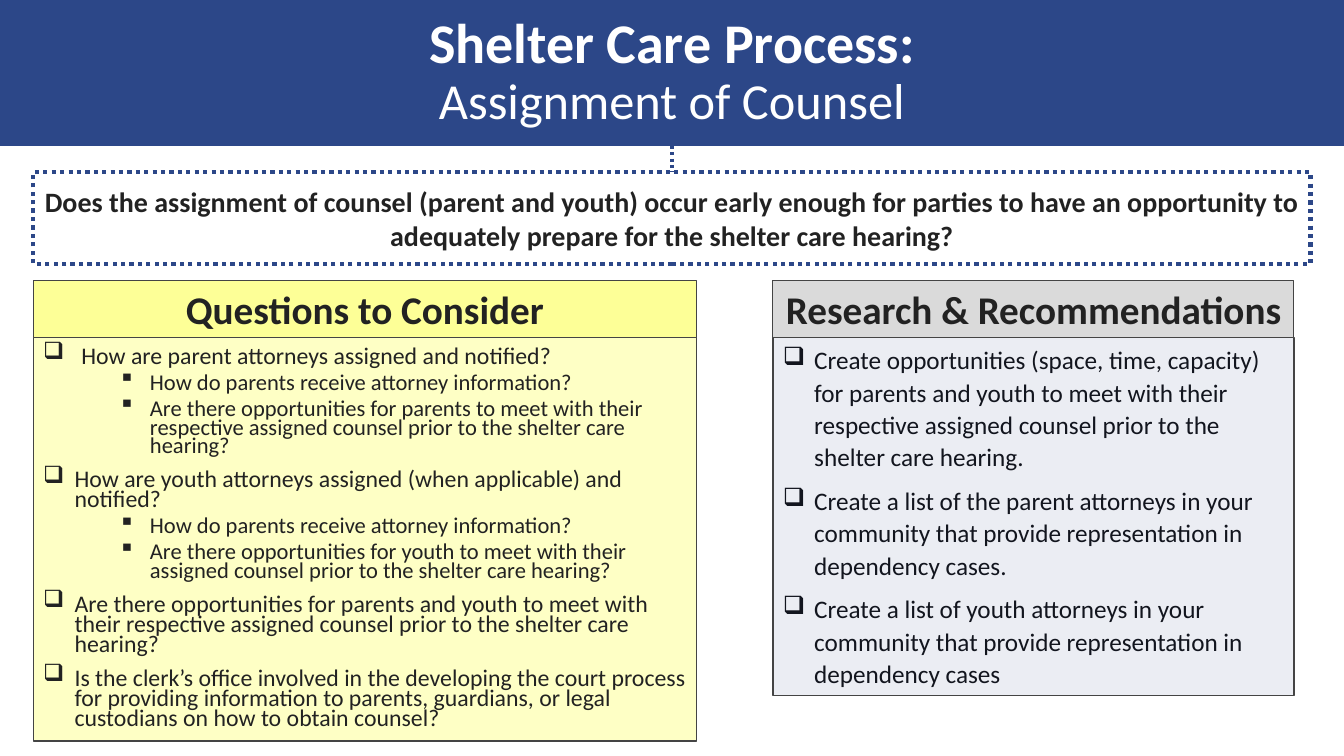
from lxml import etree
from pptx import Presentation
from pptx import util as u
from pptx.dml.color import RGBColor
from pptx.enum import dml, shapes, text
from pptx.oxml.ns import qn

Cm, Pt = u.Cm, u.Pt
COLORS = {
    "navy": "2C4788", "white": "FFFFFF", "ink": "222222", "dark": "12151E",
    "border": "444444", "yellow": "FDFF97", "cream": "FEFFC5",
    "gray": "DADADA", "mist": "EBEDF3",
}
WIDTH, HEIGHT = 33.87, 19.05
HEADING_HEIGHT = 1.45

# Each checklist entry is (level, text)
QUESTIONS = [
    (0, "How are parent attorneys assigned and notified?"),
    (1, "How do parents receive attorney information?"),
    (1, "Are there opportunities for parents to meet with their respective "
        "assigned counsel prior to the shelter care hearing?"),
    (0, "How are youth attorneys assigned (when applicable) and notified?"),
    (1, "How do parents receive attorney information?"),
    (1, "Are there opportunities for youth to meet with their assigned "
        "counsel prior to the shelter care hearing?"),
    (0, "Are there opportunities for parents and youth to meet with their "
        "respective assigned counsel prior to the shelter care hearing?"),
    (0, "Is the clerk’s office involved in the developing the court process "
        "for providing information to parents, guardians, or legal "
        "custodians on how to obtain counsel?"),
]
RECOMMENDATIONS = [
    (0, "Create opportunities (space, time, capacity) for parents and youth "
        "to meet with their respective assigned counsel prior to the shelter "
        "care hearing."),
    (0, "Create a list of the parent attorneys in your community that "
        "provide representation in dependency cases."),
    (0, "Create a list of youth attorneys in your community that provide "
        "representation in dependency cases"),
]


def rgb(name):
    return RGBColor.from_string(COLORS[name])


def style_line(line, color, width, dotted=False):
    line.color.rgb = rgb(color)
    line.width = Pt(width)
    if dotted:
        line.dash_style = dml.MSO_LINE.ROUND_DOT


def add_box(slide, box, fill=None, border=None, border_width=1, dotted=False,
            anchor=text.MSO_ANCHOR.MIDDLE):
    rect = slide.shapes.add_shape(shapes.MSO_SHAPE.RECTANGLE,
                                  *(Cm(length) for length in box))
    rect.shadow.inherit = False
    if fill:
        rect.fill.solid()
        rect.fill.fore_color.rgb = rgb(fill)
    else:
        rect.fill.background()
    if border:
        style_line(rect.line, border, border_width, dotted)
    else:
        rect.line.fill.background()
    rect.text_frame.word_wrap = True
    rect.text_frame.vertical_anchor = anchor
    return rect


def write(paragraph, words, size, color="ink", bold=False,
          align=text.PP_ALIGN.CENTER, spacing=1.0, before=0, after=0):
    paragraph.alignment = align
    paragraph.line_spacing = spacing
    paragraph.space_before, paragraph.space_after = Pt(before), Pt(after)
    run = paragraph.add_run()
    run.text = words
    run.font.name = "Calibri"
    run.font.size = Pt(size)
    run.font.bold = bold
    run.font.color.rgb = rgb(color)


def add_bullet(paragraph, mark, indent, hanging):
    properties = paragraph._p.get_or_add_pPr()
    properties.set("marL", str(Cm(indent)))
    properties.set("indent", str(-Cm(hanging)))
    etree.SubElement(properties, qn("a:buChar")).set("char", mark)


def add_banner(slide, box):
    banner = add_box(slide, box, fill="navy")
    title = banner.text_frame.paragraphs[0]
    write(title, "Shelter Care Process:", 40, "white", bold=True, spacing=0.9)
    title.add_line_break()
    write(title, "Assignment of Counsel", 36, "white", spacing=0.9)
    return banner


def add_key_question(slide, box, banner):
    question = add_box(slide, box, border="navy", border_width=3, dotted=True)
    write(question.text_frame.paragraphs[0],
          "Does the assignment of counsel (parent and youth) occur early "
          "enough for parties to have an opportunity to adequately prepare "
          "for the shelter care hearing?", 20, bold=True)

    # Dotted link from the banner
    link = slide.shapes.add_connector(shapes.MSO_CONNECTOR.STRAIGHT, 0, 0, 0, 0)
    link.begin_connect(banner, 2)
    link.end_connect(question, 0)
    style_line(link.line, "navy", 2.25, dotted=True)
    etree.SubElement(link._element.spPr, qn("a:effectLst"))


def add_panel(slide, box, heading, entries, heading_fill, body_fill, sizes,
              color="ink", spacing=1.0, before=(0, 0), after=0,
              first_indent=0.79, anchor=text.MSO_ANCHOR.TOP):
    left, top, width, height = box

    # Checklist
    body = add_box(slide, (left, top + HEADING_HEIGHT, width,
                           height - HEADING_HEIGHT),
                   fill=body_fill, border="border", anchor=anchor)
    frame = body.text_frame
    for number, (level, words) in enumerate(entries):
        entry = frame.add_paragraph() if number else frame.paragraphs[0]
        entry.level = level
        write(entry, words, sizes[level], color, align=text.PP_ALIGN.LEFT,
              spacing=spacing, before=before[level], after=after)
        if level:
            add_bullet(entry, "▪", 2.69, 0.79)
        else:
            indent = 0.79 if number else first_indent
            add_bullet(entry, "❑", indent, indent)

    # Heading
    header = add_box(slide, (left, top, width, HEADING_HEIGHT),
                     fill=heading_fill, border="border", border_width=0.75)
    header.text_frame.word_wrap = False
    write(header.text_frame.paragraphs[0], heading, 28, bold=True)


def main():
    deck = Presentation()
    deck.slide_width, deck.slide_height = Cm(WIDTH), Cm(HEIGHT)
    slide = deck.slides.add_slide(deck.slide_layouts[6])

    banner = add_banner(slide, (0, 0, WIDTH, 3.68))
    add_key_question(slide, (0.84, 4.34, 32.19, 2.31), banner)
    add_panel(slide, (0.84, 7.06, 16.71, 11.61), "Questions to Consider",
              QUESTIONS, "yellow", "cream", sizes=(17, 16.1), spacing=0.7,
              before=(10, 5), first_indent=0.96,
              anchor=text.MSO_ANCHOR.MIDDLE)
    add_panel(slide, (19.48, 7.06, 13.13, 10.47), "Research & Recommendations",
              RECOMMENDATIONS, "gray", "mist", sizes=(18,), color="dark",
              spacing=1.07, after=8)

    deck.save("out.pptx")


if __name__ == "__main__":
    main()
